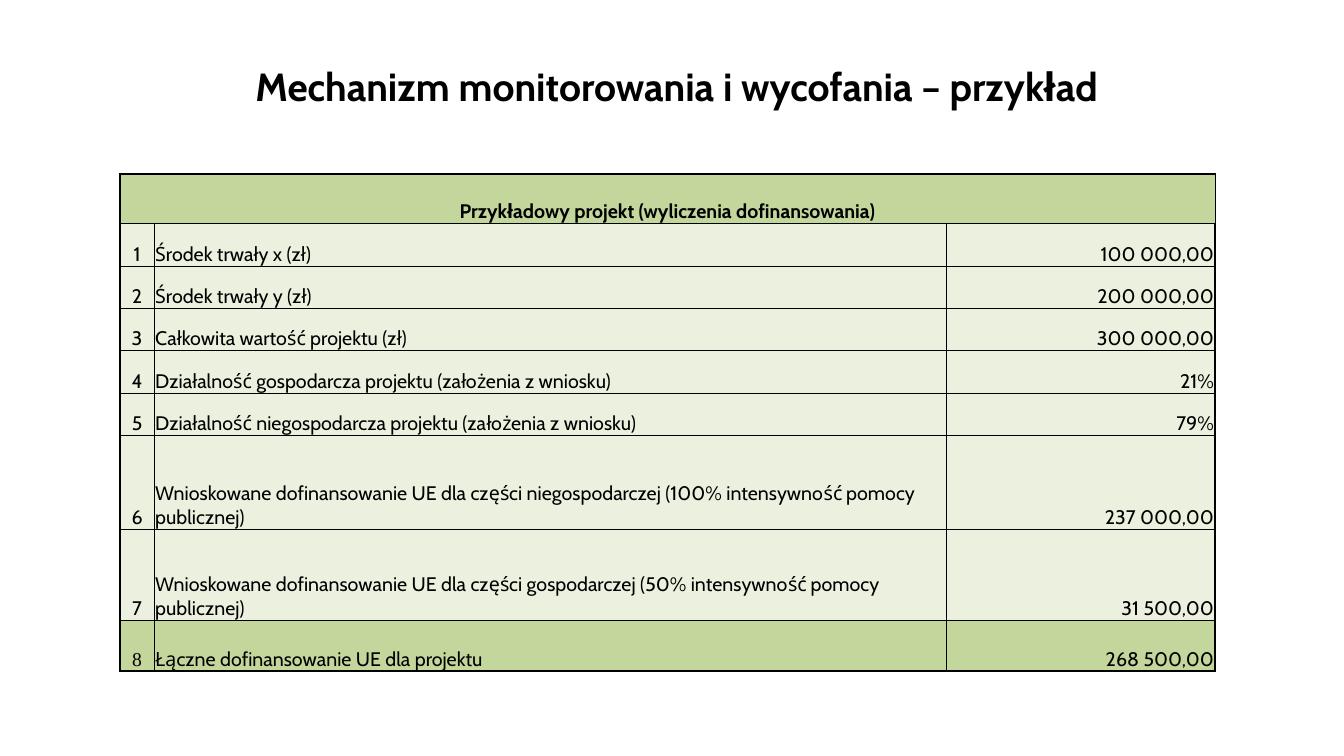
"""Build a slide with a worked example of project co-financing."""
import pptx
import pptx.util
import pptx.dml.color
import pptx.enum.text
import pptx.oxml.ns
from lxml import etree

TITLE = "Mechanizm monitorowania i wycofania – przykład"
HEADER = "Przykładowy projekt (wyliczenia dofinansowania)"
ITEMS = [
    ("Środek trwały x (zł)", "100 000,00"),
    ("Środek trwały y (zł)", "200 000,00"),
    ("Całkowita wartość projektu (zł)", "300 000,00"),
    ("Działalność gospodarcza projektu (założenia z wniosku)", "21%"),
    ("Działalność niegospodarcza projektu (założenia z wniosku)", "79%"),
    ("Wnioskowane dofinansowanie UE dla części niegospodarczej "
     "(100% intensywność pomocy publicznej)", "237 000,00"),
    ("Wnioskowane dofinansowanie UE dla części gospodarczej "
     "(50% intensywność pomocy publicznej)", "31 500,00"),
    ("Łączne dofinansowanie UE dla projektu", "268 500,00"),
]
FONT, NUMBER_FONT = "Cabin", "Times New Roman"
BLACK, GREEN, PALE = "000000", "C3D69B", "EBF1DE"
COLUMNS = [34, 786, 266]
ROWS = [49] + [42] * 5 + [93, 91, 50]
THIN, THICK = 0.5, 1.5
ALIGN = pptx.enum.text.PP_ALIGN
ANCHOR = pptx.enum.text.MSO_ANCHOR


def px(n):
    return pptx.util.Emu(n * 9144)


def rgb(value):
    return pptx.dml.color.RGBColor.from_string(value)


def style(p, size, bold, align, font=FONT):
    p.alignment = align
    p.font.size, p.font.bold, p.font.name = pptx.util.Pt(size), bold, font
    p.font.color.rgb = rgb(BLACK)


def set_borders(cell, widths):
    props = cell._tc.get_or_add_tcPr()
    for i, (side, width) in enumerate(widths.items()):
        line = etree.Element(pptx.oxml.ns.qn(f"a:ln{side}"), w=str(pptx.util.Pt(width)))
        fill = etree.SubElement(line, pptx.oxml.ns.qn("a:solidFill"))
        etree.SubElement(fill, pptx.oxml.ns.qn("a:srgbClr"), val=BLACK)
        props.insert(i, line)


def add_title(s):
    title = s.shapes.title
    title.left, title.top, title.width, title.height = map(px, (71, 57, 1200, 80))
    tf = title.text_frame
    tf.text = TITLE
    tf.auto_size = pptx.enum.text.MSO_AUTO_SIZE.NONE
    tf.vertical_anchor = ANCHOR.TOP
    style(tf.paragraphs[0], 28, True, ALIGN.CENTER)


def add_costs(s):
    rows = [(HEADER, "", "")] + [(str(i), *item) for i, item in enumerate(ITEMS, 1)]
    last_row, last_col = len(ROWS) - 1, len(COLUMNS) - 1
    table = s.shapes.add_table(len(ROWS), len(COLUMNS), px(119), px(173),
                               px(sum(COLUMNS)), px(sum(ROWS))).table
    table.first_row = table.horz_banding = False
    for column, width in zip(table.columns, COLUMNS):
        column.width = px(width)
    for row, height in zip(table.rows, ROWS):
        row.height = px(height)
    table.cell(0, 0).merge(table.cell(0, last_col))
    for r, texts in enumerate(rows):
        for c, text in enumerate(texts):
            cell = table.cell(r, c)
            cell.margin_left = cell.margin_right = cell.margin_top = px(1)
            cell.margin_bottom = 0
            cell.vertical_anchor = ANCHOR.BOTTOM
            cell.fill.solid()
            cell.fill.fore_color.rgb = rgb(GREEN if r in (0, last_row) else PALE)
            set_borders(cell, {"L": THICK if c == 0 else THIN,
                               "R": THICK if c == last_col else THIN,
                               "T": THICK if r == 0 else THIN,
                               "B": THICK if r == last_row else THIN})
            if text:
                cell.text = text
                style(cell.text_frame.paragraphs[0], 14, r == 0,
                      (ALIGN.CENTER, ALIGN.LEFT, ALIGN.RIGHT)[c],
                      NUMBER_FONT if (r, c) == (last_row, 0) else FONT)


def main():
    prs = pptx.Presentation()
    prs.slide_width, prs.slide_height = px(1333), px(750)
    s = prs.slides.add_slide(prs.slide_layouts[5])
    add_costs(s)
    add_title(s)
    prs.save("out.pptx")


if __name__ == "__main__":
    main()
